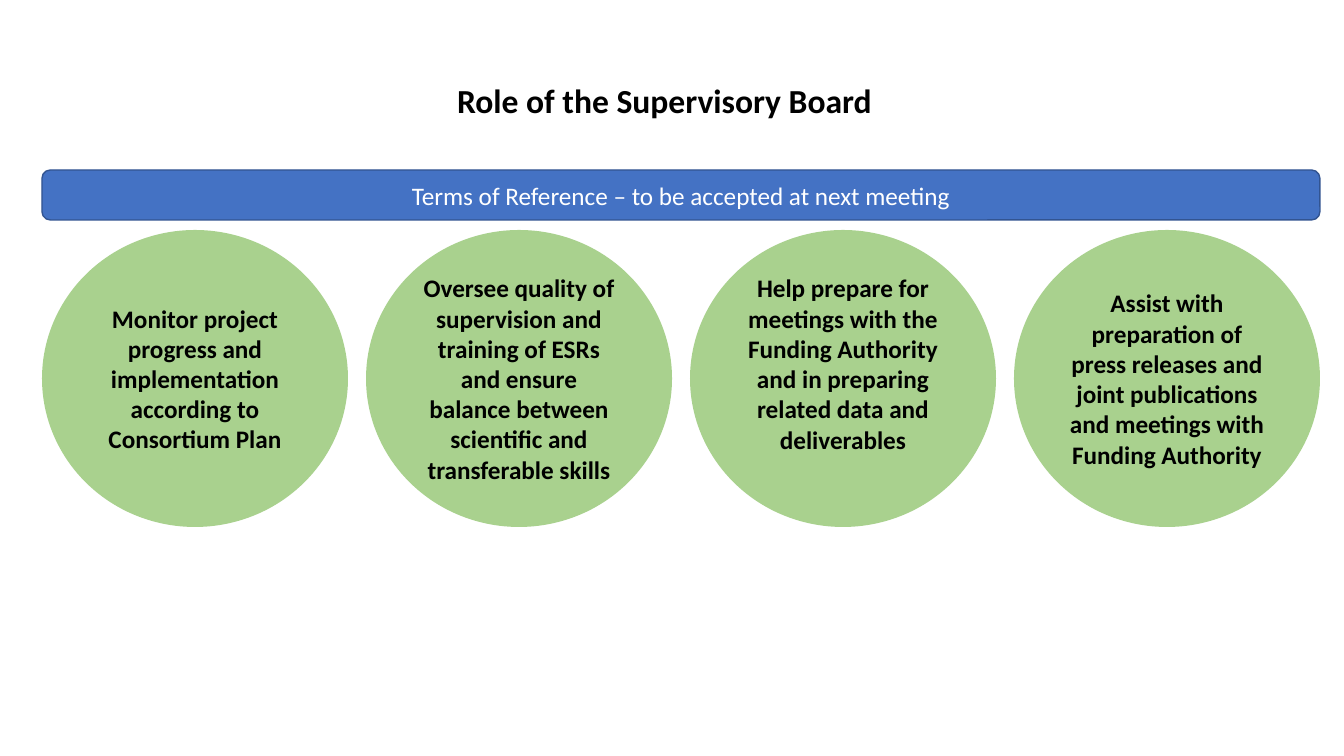
from pptx import Presentation, util as u
from pptx.dml.color import RGBColor
from pptx.enum import shapes, text

# Content
TITLE = "Role of the Supervisory Board"
BANNER = "Terms of Reference – to be accepted at next meeting"
# Each role: wording, extra space below the text in px
ROLES = [
    ("Monitor project progress and implementation according to Consortium Plan", 0),
    ("Oversee quality of supervision and training of ESRs and ensure balance "
     "between scientific and transferable skills", 0),
    ("Help prepare for meetings with the Funding Authority and in preparing "
     "related data and deliverables", 30),
    ("Assist with preparation of press releases and joint publications and "
     "meetings with Funding Authority", 0),
]

# Layout in px
SLIDE_W, SLIDE_H = 1344, 756
LEFT, BANNER_W = 42, 1278
CIRCLE_W, CIRCLE_H, CIRCLE_TOP = 306, 297, 230
STEP = (BANNER_W - CIRCLE_W) // (len(ROLES) - 1)
INSET = 5


def px(length):
    return u.Emu(round(length * 914400 / 100.8))


def colour(value):
    return RGBColor.from_string(value)


def write(shape, words, size, ink, bold, align, anchor, wrap=True):
    frame = shape.text_frame
    frame.word_wrap = wrap
    frame.vertical_anchor = anchor
    para = frame.paragraphs[0]
    para.alignment = align
    span = para.add_run()
    span.text = words
    for name, value in {"name": "Calibri", "size": u.Pt(size), "bold": bold}.items():
        setattr(span.font, name, value)
    span.font.color.rgb = colour(ink)


def add_panel(page, kind, area, fill, words, ink, bold, line=None):
    shape = page.shapes.add_shape(kind, *map(px, area))
    shape.shadow.inherit = False
    shape.fill.solid()
    shape.fill.fore_color.rgb = colour(fill)
    if line:
        shape.line.color.rgb = colour(line)
        shape.line.width = u.Pt(1)
    else:
        shape.line.fill.background()
    write(shape, words, 18, ink, bold, text.PP_ALIGN.CENTER, text.MSO_ANCHOR.MIDDLE)
    return shape


def main():
    deck = Presentation()
    deck.slide_width, deck.slide_height = px(SLIDE_W), px(SLIDE_H)
    page = deck.slides.add_slide(deck.slide_layouts[5])

    # Role circles
    for index, (words, space_below) in enumerate(ROLES):
        area = (LEFT + index * STEP, CIRCLE_TOP, CIRCLE_W, CIRCLE_H)
        circle = add_panel(page, shapes.MSO_SHAPE.OVAL, area, "A9D18E",
                           words, "000000", True)
        circle.text_frame.margin_bottom = px(INSET + space_below)

    # Title
    title = page.shapes.title
    title.left, title.top, title.width, title.height = map(px, (447, 75, 436, 50))
    write(title, TITLE, 24, "000000", True, text.PP_ALIGN.LEFT,
          text.MSO_ANCHOR.TOP, wrap=False)

    # Banner
    add_panel(page, shapes.MSO_SHAPE.ROUNDED_RECTANGLE, (LEFT, 170, BANNER_W, 50),
              "4472C4", BANNER, "FFFFFF", False, line="325491")

    deck.save("out.pptx")


if __name__ == "__main__":
    main()
